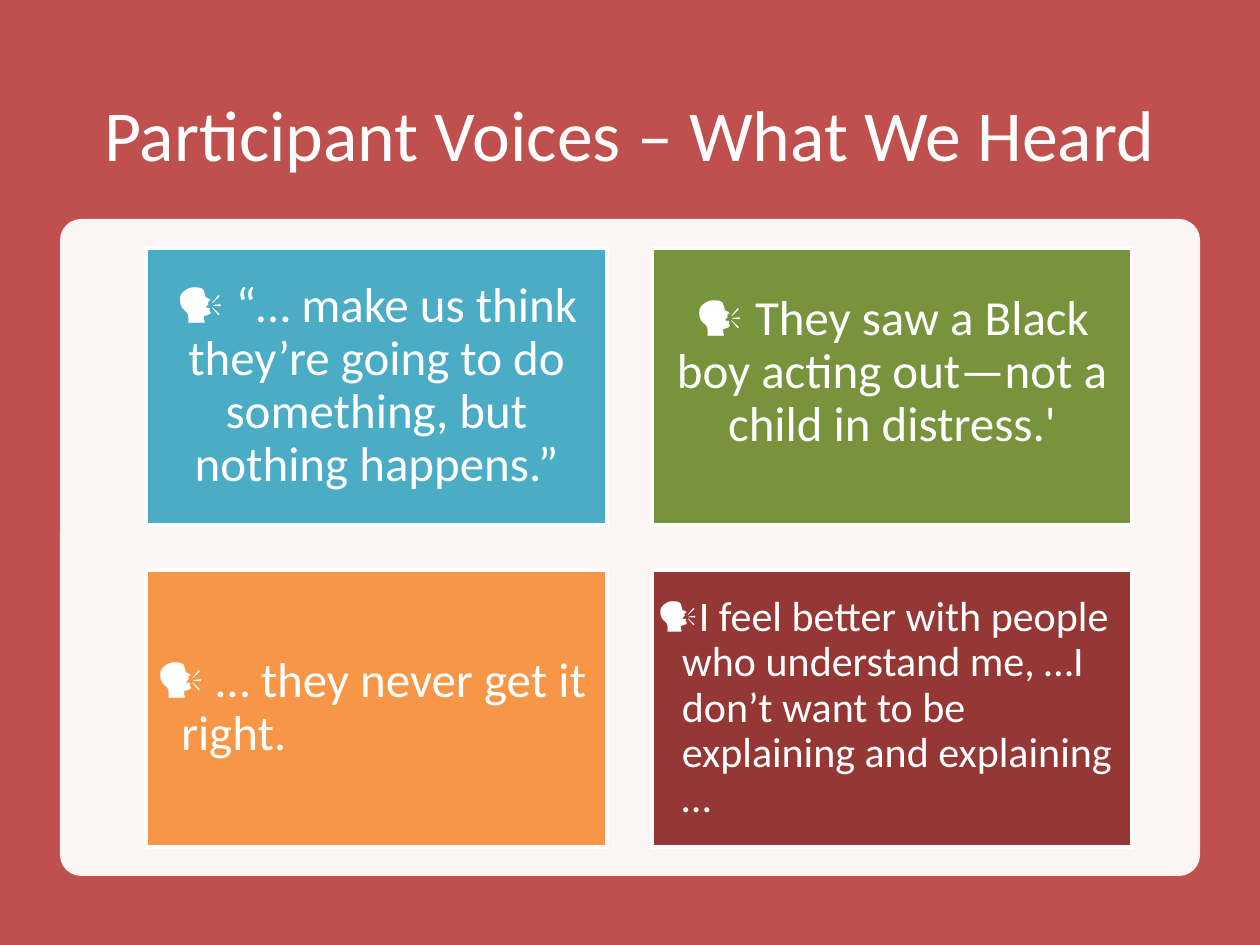
from dataclasses import dataclass

from lxml.etree import SubElement
from pptx import Presentation
from pptx.dml.color import RGBColor as RGB
from pptx.enum.shapes import MSO_SHAPE as SHAPE
from pptx.enum.text import MSO_ANCHOR as ANCHOR, MSO_AUTO_SIZE as AUTO, PP_ALIGN as ALIGN
from pptx.oxml.ns import qn
from pptx.util import Inches, Pt

PX = Inches(1) / 126


@dataclass(frozen=True)
class Theme:
    font: str = "Calibri"
    back: str = "C0504D"
    light: str = "FFFFFF"
    blue: str = "4BACC6"
    green: str = "77933C"
    orange: str = "F79646"
    red: str = "953735"
    title: int = 41
    quote: int = 28
    long_quote: int = 24


T = Theme()


@dataclass(frozen=True)
class Quote:
    text: str
    fill: str
    size: int = T.quote
    hanging: bool = False
    inset: int = 10
    lift: int = 0


QUOTES = [
    Quote("🗣 “… make us think they’re going to do something, but nothing happens.”", T.blue),
    Quote("🗣 They saw a Black boy acting out—not a child in distress.'", T.green, lift=28),
    Quote("🗣 … they never get it right.", T.orange, hanging=True),
    Quote("🗣I feel better with people who understand me, …I don’t want to be "
          "explaining and explaining …", T.red, T.long_quote, True, 5),
]


def px(n):
    return round(n * PX)


def add_block(slide, kind, box, color):
    s = slide.shapes.add_shape(kind, *map(px, box))
    s.shadow.inherit = False
    s.fill.solid()
    s.fill.fore_color.rgb = RGB.from_string(color)
    s.line.fill.background()
    return s


def add_text(p, text, size, align):
    p.alignment = align
    r = p.add_run()
    r.text = text
    r.font.name = T.font
    r.font.size = Pt(size)
    r.font.color.rgb = RGB.from_string(T.light)


def add_background(slide, box):
    s = add_block(slide, SHAPE.RECTANGLE, box, T.back)
    slide.shapes._spTree.insert(2, s._element)


def add_title(slide, box):
    s = slide.shapes.title
    s.left, s.top, s.width, s.height = map(px, box)
    tf = s.text_frame
    tf.auto_size = AUTO.NONE
    tf.vertical_anchor = ANCHOR.MIDDLE
    add_text(tf.paragraphs[0], "Participant Voices – What We Heard", T.title, ALIGN.CENTER)


def add_card(slide, box, quote):
    s = add_block(slide, SHAPE.RECTANGLE, box, quote.fill)
    s.line.color.rgb = RGB.from_string(T.light)
    s.line.width = Pt(2)
    tf = s.text_frame
    tf.word_wrap = True
    tf.vertical_anchor = ANCHOR.MIDDLE
    tf.margin_left = tf.margin_right = tf.margin_top = px(quote.inset)
    tf.margin_bottom = px(quote.inset + quote.lift)
    p = tf.paragraphs[0]
    p.line_spacing = 0.9
    p.space_after = Pt(8)
    add_text(p, quote.text, quote.size, ALIGN.LEFT if quote.hanging else ALIGN.CENTER)
    if quote.hanging:
        pPr = p._p.get_or_add_pPr()
        pPr.set("marL", str(px(25)))
        pPr.set("indent", str(-px(25)))


def add_panel(slide, box):
    s = add_block(slide, SHAPE.ROUNDED_RECTANGLE, box, T.light)
    s.adjustments[0] = 0.032
    color = s._element.spPr.find(qn("a:solidFill"))[0]
    SubElement(color, qn("a:alpha")).set("val", "95000")

    left, top = box[0] + 86, box[1] + 29
    widths, height, gap = (461, 480), 277, 45
    for i, quote in enumerate(QUOTES):
        row, col = divmod(i, 2)
        x = left + col * (widths[0] + gap)
        y = top + row * (height + gap)
        add_card(slide, (x, y, widths[col], height), quote)


def main():
    prs = Presentation()
    prs.slide_width, prs.slide_height = px(1260), px(945)
    slide = prs.slides.add_slide(prs.slide_layouts[5])
    add_background(slide, (0, 0, 1260, 945))
    add_title(slide, (87, 63, 1086, 139))
    add_panel(slide, (60, 219, 1140, 657))
    prs.save("out.pptx")


if __name__ == "__main__":
    main()
